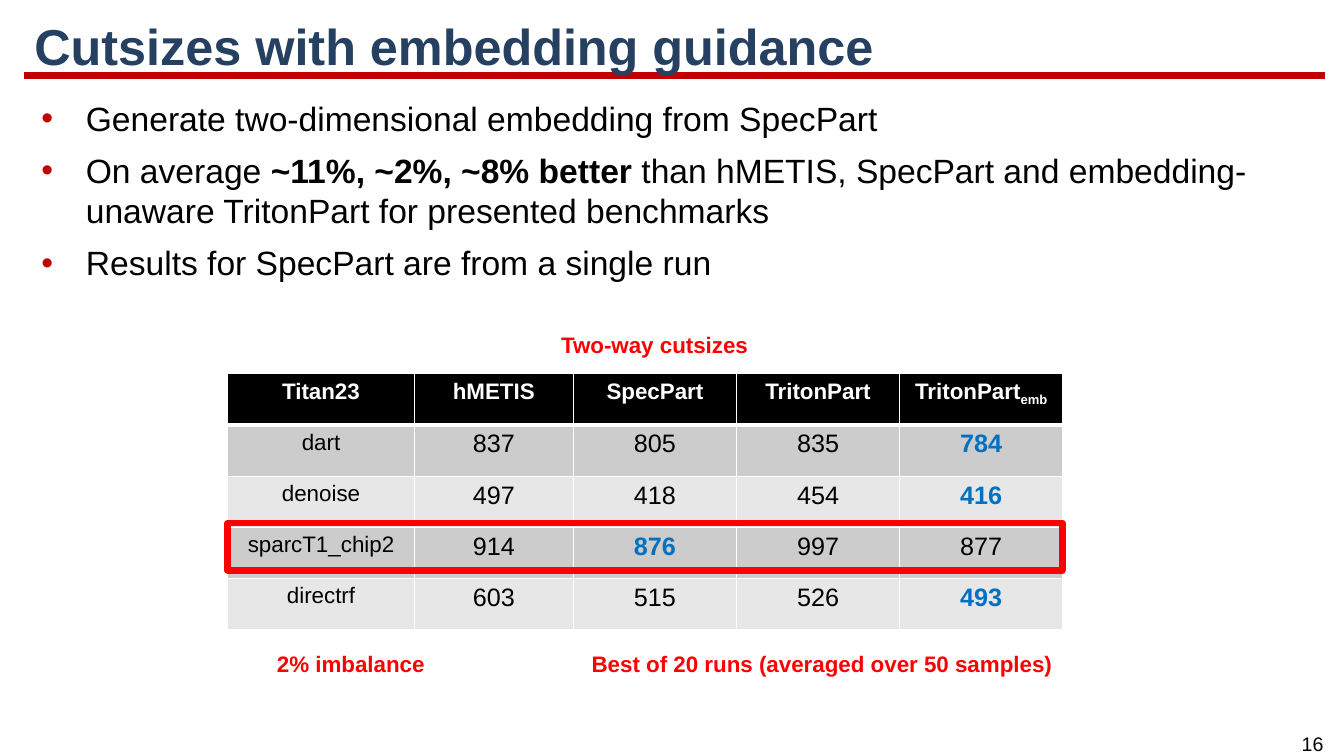
from dataclasses import dataclass
from typing import Any

from lxml.etree import SubElement
from pptx import Presentation
from pptx.dml.color import RGBColor
from pptx.enum.shapes import MSO_CONNECTOR as Connector, MSO_SHAPE as Preset
from pptx.enum.text import MSO_ANCHOR as Anchor, MSO_AUTO_SIZE as AutoSize, PP_ALIGN as Align
from pptx.oxml.ns import qn
from pptx.util import Cm, Pt

RED, DARK_RED, BLUE, NAVY = "FF0000", "C00000", "0070C0", "254061"
BLACK, WHITE = "000000", "FFFFFF"
BANDS = ("CCCCCC", "E7E7E7")


@dataclass(frozen=True)
class Box:
    left: float
    top: float
    width: float
    height: float

    def lengths(self) -> tuple:
        return Cm(self.left), Cm(self.top), Cm(self.width), Cm(self.height)


@dataclass(frozen=True)
class Style:
    size: float
    color: str = BLACK
    bold: bool = False
    baseline: int = 0


@dataclass(frozen=True)
class Label:
    text: str
    box: Box
    style: Style
    align: Any = Align.LEFT


CAPTION = Style(16, RED, True)
HEADER = Style(16, WHITE, True)
NAME = Style(16)
VALUE = Style(18)
BEST = Style(18, BLUE, True)
BULLET = Style(24)
STRONG = Style(24, bold=True)

BULLETS = [
    [("Generate two-dimensional embedding from SpecPart", BULLET)],
    [("On average ", BULLET), ("~11%, ~2%, ~8% better ", STRONG),
     ("than hMETIS, SpecPart and embedding-unaware TritonPart for presented benchmarks", BULLET)],
    [("Results for SpecPart are from a single run", BULLET)],
]
HEADINGS = ["Titan23", "hMETIS", "SpecPart", "TritonPart", "TritonPart"]
CUTSIZES = {
    "dart": [837, 805, 835, 784],
    "denoise": [497, 418, 454, 416],
    "sparcT1_chip2": [914, 876, 997, 877],
    "directrf": [603, 515, 526, 493],
}
COLUMN_WIDTHS = [4.7, 4.01, 4.11, 4.11, 4.11]
ROW_HEIGHT = 1.29
TABLE = Box(5.74, 9.42, sum(COLUMN_WIDTHS), ROW_HEIGHT * (len(CUTSIZES) + 1))
HIGHLIGHT = Box(5.74, 13.18, 21.03, 1.19)
LABELS = [
    Label("16", Box(32.33, 18.31, 1.5, 0.86), Style(14), Align.CENTER),
    Label("Two-way cutsizes", Box(13.89, 8.23, 5.84, 0.94), CAPTION),
    Label("2% imbalance", Box(6.73, 16.26, 5.84, 0.94), CAPTION),
    Label("Best of 20 runs (averaged over 50 samples)", Box(14.66, 16.26, 16.41, 0.94), CAPTION),
]


def set_values(target: Any, values: dict) -> None:
    for name, value in values.items():
        setattr(target, name, value)


def paint(color_format: Any, color: str) -> None:
    color_format.rgb = RGBColor.from_string(color)


def add_run(paragraph: Any, text: str, style: Style) -> None:
    run = paragraph.add_run()
    run.text = text
    set_values(run.font, {"name": "Arial", "size": Pt(style.size), "bold": style.bold})
    paint(run.font.color, style.color)
    if style.baseline:
        run.font._element.set("baseline", str(style.baseline))


def place(shape: Any, box: Box) -> None:
    set_values(shape, dict(zip(("left", "top", "width", "height"), box.lengths())))


def add_title(slide: Any) -> None:
    title = slide.shapes.title
    place(title, Box(0.61, 0.41, 32.79, 1.65))
    set_values(title.text_frame, {"vertical_anchor": Anchor.MIDDLE, "auto_size": AutoSize.NONE})
    paragraph = title.text_frame.paragraphs[0]
    set_values(paragraph, {"alignment": Align.LEFT, "line_spacing": 0.9})
    add_run(paragraph, "Cutsizes with embedding guidance", Style(36, NAVY, True))


def add_bullets(slide: Any) -> None:
    body = slide.placeholders[1]
    place(body, Box(0.64, 2.34, 32.72, 15.44))
    frame = body.text_frame
    set_values(frame, {"vertical_anchor": Anchor.TOP, "auto_size": AutoSize.NONE})
    for index, runs in enumerate(BULLETS):
        paragraph = frame.add_paragraph() if index else frame.paragraphs[0]
        properties = paragraph._p.get_or_add_pPr()
        set_values(paragraph, {"space_before": Pt(8.4 if index else 0), "alignment": Align.LEFT})
        properties.set("marL", str(Cm(1.27)))
        properties.set("indent", str(-Cm(1.12)))
        bullet_color = SubElement(properties, qn("a:buClr"))
        SubElement(bullet_color, qn("a:srgbClr"), val=DARK_RED)
        SubElement(properties, qn("a:buFont"), typeface="Arial")
        SubElement(properties, qn("a:buChar"), char="•")
        for text, style in runs:
            add_run(paragraph, text, style)


def add_rule(slide: Any) -> None:
    rule = slide.shapes.add_connector(Connector.STRAIGHT, Cm(0.61), Cm(1.9), Cm(33.38), Cm(1.9))
    paint(rule.line.color, DARK_RED)
    rule.line.width = Pt(4.5)
    SubElement(rule._element.spPr, qn("a:effectLst"))
    rule._element.getparent().insert(2, rule._element)


def add_label(slide: Any, label: Label) -> None:
    frame = slide.shapes.add_textbox(*label.box.lengths()).text_frame
    frame.word_wrap = True
    paragraph = frame.paragraphs[0]
    paragraph.alignment = label.align
    add_run(paragraph, label.text, label.style)


def fill_cell(cell: Any, text: str, style: Style, fill: str, borders: dict) -> None:
    properties = cell._tc.get_or_add_tcPr()
    for side, points in borders.items():
        border = SubElement(properties, qn(f"a:ln{side}"), w=str(Pt(points)))
        solid = SubElement(border, qn("a:solidFill"))
        SubElement(solid, qn("a:srgbClr"), val=WHITE)
    cell.fill.solid()
    paint(cell.fill.fore_color, fill)
    paragraph = cell.text_frame.paragraphs[0]
    paragraph.alignment = Align.CENTER
    add_run(paragraph, text, style)


def add_cutsize_table(slide: Any) -> None:
    table = slide.shapes.add_table(len(CUTSIZES) + 1, len(HEADINGS), *TABLE.lengths()).table
    for column, width in zip(table.columns, COLUMN_WIDTHS):
        column.width = Cm(width)
    for row in table.rows:
        row.height = Cm(ROW_HEIGHT)
    for column, heading in enumerate(HEADINGS):
        fill_cell(table.cell(0, column), heading, HEADER, BLACK, {"L": 1, "R": 1, "T": 1, "B": 3})
    embedded = table.cell(0, len(HEADINGS) - 1).text_frame.paragraphs[0]
    add_run(embedded, "emb", Style(16, WHITE, True, -25000))
    for row, (name, values) in enumerate(CUTSIZES.items(), start=1):
        fill = BANDS[(row - 1) % 2]
        borders = {"L": 1, "R": 1, "T": 3 if row == 1 else 1, "B": 1}
        fill_cell(table.cell(row, 0), name, NAME, fill, borders)
        for column, value in enumerate(values, start=1):
            style = BEST if value == min(values) else VALUE
            fill_cell(table.cell(row, column), str(value), style, fill, borders)


def add_highlight(slide: Any) -> None:
    frame = slide.shapes.add_shape(Preset.RECTANGLE, *HIGHLIGHT.lengths())
    frame.shadow.inherit = False
    frame.fill.background()
    paint(frame.line.color, RED)
    frame.line.width = Pt(4.75)


def main() -> None:
    presentation = Presentation()
    set_values(presentation, {"slide_width": Cm(33.87), "slide_height": Cm(19.05)})
    slide = presentation.slides.add_slide(presentation.slide_layouts[1])
    add_rule(slide)
    add_title(slide)
    add_bullets(slide)
    add_cutsize_table(slide)
    for label in LABELS:
        add_label(slide, label)
    add_highlight(slide)
    presentation.save("out.pptx")


if __name__ == "__main__":
    main()
